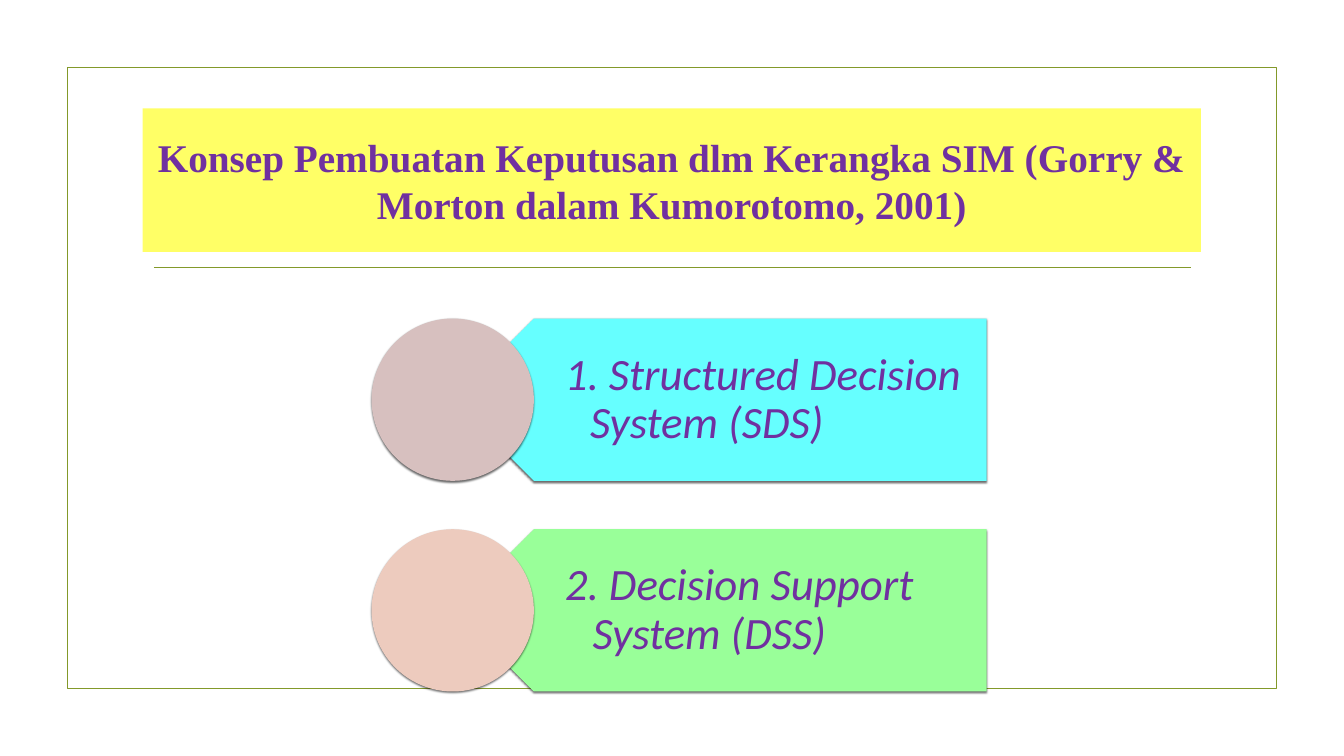
from lxml.etree import SubElement
from pptx import Presentation
from pptx.dml.color import RGBColor
from pptx.enum.shapes import MSO_CONNECTOR, MSO_SHAPE
from pptx.enum.text import MSO_ANCHOR, PP_ALIGN
from pptx.oxml.ns import qn
from pptx.util import Pt

OLIVE, PURPLE = "83992A", "7030A0"
ROWS = [
    ("1. Structured Decision System (SDS)", "66FFFF", "D7C0BF", 36),
    ("2. Decision Support System (DSS)", "99FF99", "EDCBBE", 39.6),
]


def color(hex_value):
    """Return the colour for a hex string."""
    return RGBColor.from_string(hex_value)


def add_shadow(sp):
    """Give a shape a soft shadow straight below it."""
    effects = sp._element.spPr.find(qn("a:effectLst"))
    shadow = SubElement(effects, qn("a:outerShdw"), blurRad=str(Pt(3)),
                        dist=str(Pt(2)), dir="5400000", rotWithShape="0")
    black = SubElement(shadow, qn("a:srgbClr"), val="000000")
    SubElement(black, qn("a:alpha"), val="60000")


def add_box(s, kind, x, y, w, h, fill=None, line=None, shadow=False):
    """Add a preset shape with an optional fill, outline and shadow."""
    sp = s.shapes.add_shape(kind, Pt(x), Pt(y), Pt(w), Pt(h))
    sp.shadow.inherit = False
    if fill:
        sp.fill.solid()
        sp.fill.fore_color.rgb = color(fill)
    else:
        sp.fill.background()
    if line:
        sp.line.color.rgb = color(line)
        sp.line.width = Pt(1.25)
    else:
        sp.line.fill.background()
    if shadow:
        add_shadow(sp)
    return sp


def set_text(sp, text, size, font, bold=False, italic=False,
             align=PP_ALIGN.LEFT, spacing=None, hang=0, insets=(7.2, 3.6, 7.2, 3.6)):
    """Write one formatted, vertically centred paragraph into a shape."""
    tf = sp.text_frame
    tf.word_wrap = True
    tf.vertical_anchor = MSO_ANCHOR.MIDDLE
    (tf.margin_left, tf.margin_top,
     tf.margin_right, tf.margin_bottom) = map(Pt, insets)
    p = tf.paragraphs[0]
    p.alignment = align
    if spacing:
        p.line_spacing = spacing
    if hang:
        pPr = p._p.get_or_add_pPr()
        pPr.set("marL", str(Pt(hang)))
        pPr.set("indent", str(-Pt(hang)))
    r = p.add_run()
    r.text = text
    r.font.name, r.font.size = font, Pt(size)
    r.font.bold, r.font.italic = bold, italic
    r.font.color.rgb = color(PURPLE)


def add_frame(s, x, y, w, h):
    """Draw the slide border and the rule below the title."""
    add_box(s, MSO_SHAPE.RECTANGLE, x, y, w, h, line=OLIVE)
    rule_y = Pt(y + 285.84)
    rule = s.shapes.add_connector(MSO_CONNECTOR.STRAIGHT, Pt(x + 123.84), rule_y,
                                  Pt(x + w - 122.4), rule_y)
    rule.line.color.rgb = color(OLIVE)
    rule.line.width = Pt(1.25)
    SubElement(rule._element.spPr, qn("a:effectLst"))


def add_title(s, x, y, w, h):
    """Draw the title band."""
    sp = add_box(s, MSO_SHAPE.RECTANGLE, x, y, w, h, fill="FFFF66")
    set_text(sp, "Konsep Pembuatan Keputusan dlm Kerangka SIM "
             "(Gorry & Morton dalam Kumorotomo, 2001)",
             56, "Times New Roman", bold=True, align=PP_ALIGN.CENTER)


def add_row(s, x, y, w, h, text, plate_fill, disc_fill, hang):
    """Draw a left-pointing plate with its label and a disc over its tip."""
    plate_w = w - h / 2
    plate = add_box(s, MSO_SHAPE.PENTAGON, x + h / 2, y, plate_w, h,
                    fill=plate_fill, shadow=True)
    plate.rotation = 180
    label_x = x + h * 0.75
    label = s.shapes.add_textbox(Pt(label_x), Pt(y), Pt(x + w - label_x), Pt(h))
    set_text(label, text, 64, "Calibri", italic=True, spacing=0.9, hang=hang,
             insets=(102.24, 19.44, 36, 19.44))
    add_box(s, MSO_SHAPE.OVAL, x, y, h, h, fill=disc_fill, shadow=True)


def main():
    """Build the slide and save it."""
    prs = Presentation()
    prs.slide_width, prs.slide_height = Pt(1919.52), Pt(1080)
    s = prs.slides.add_slide(prs.slide_layouts[6])
    add_frame(s, 95.76, 95.76, 1727.28, 887.76)
    add_title(s, 203.76, 154.8, 1511.28, 205.2)
    for i, row in enumerate(ROWS):
        add_row(s, 530.64, 455.04 + i * 300.96, 878.4, 231.84, *row)
    prs.save("out.pptx")


if __name__ == "__main__":
    main()
